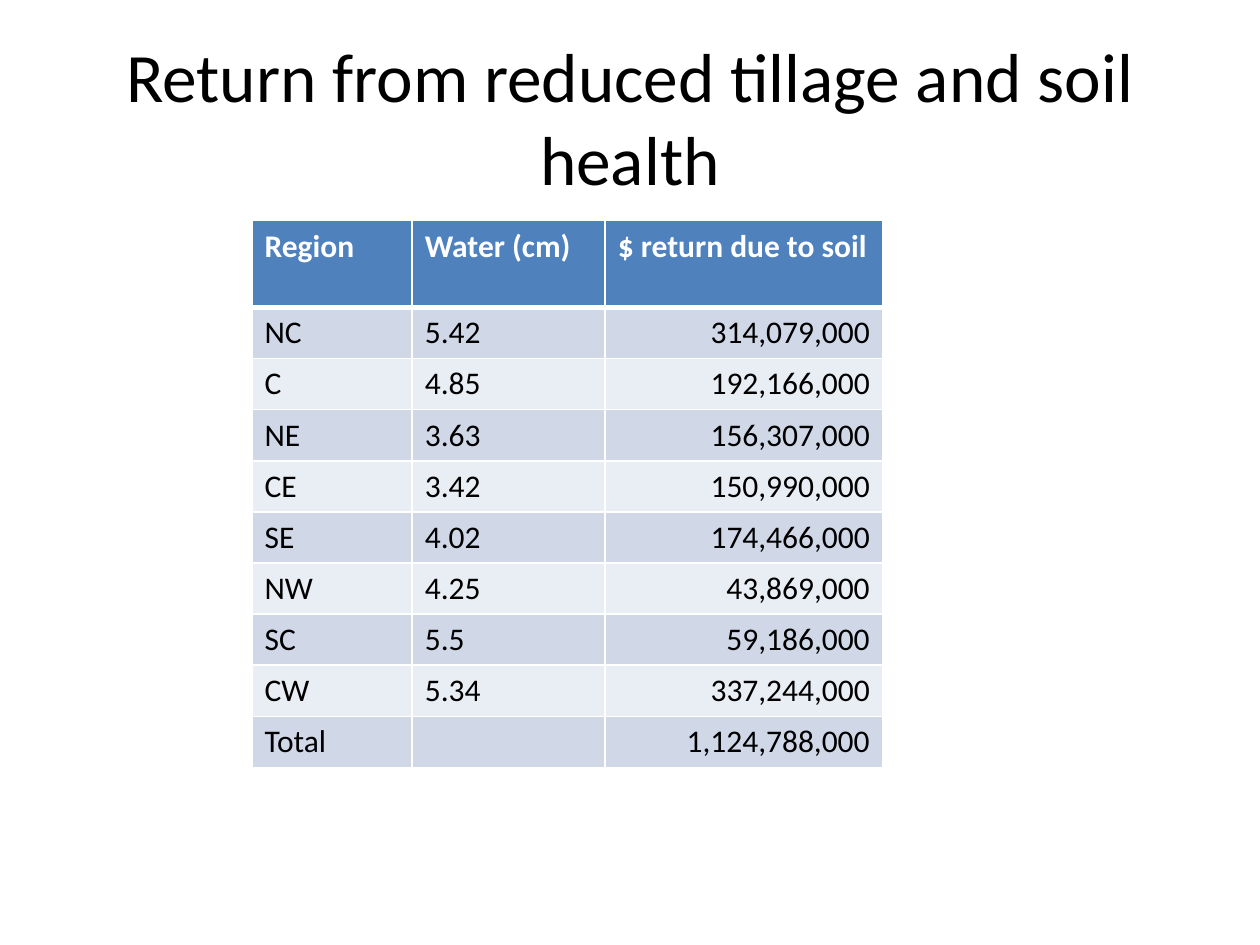
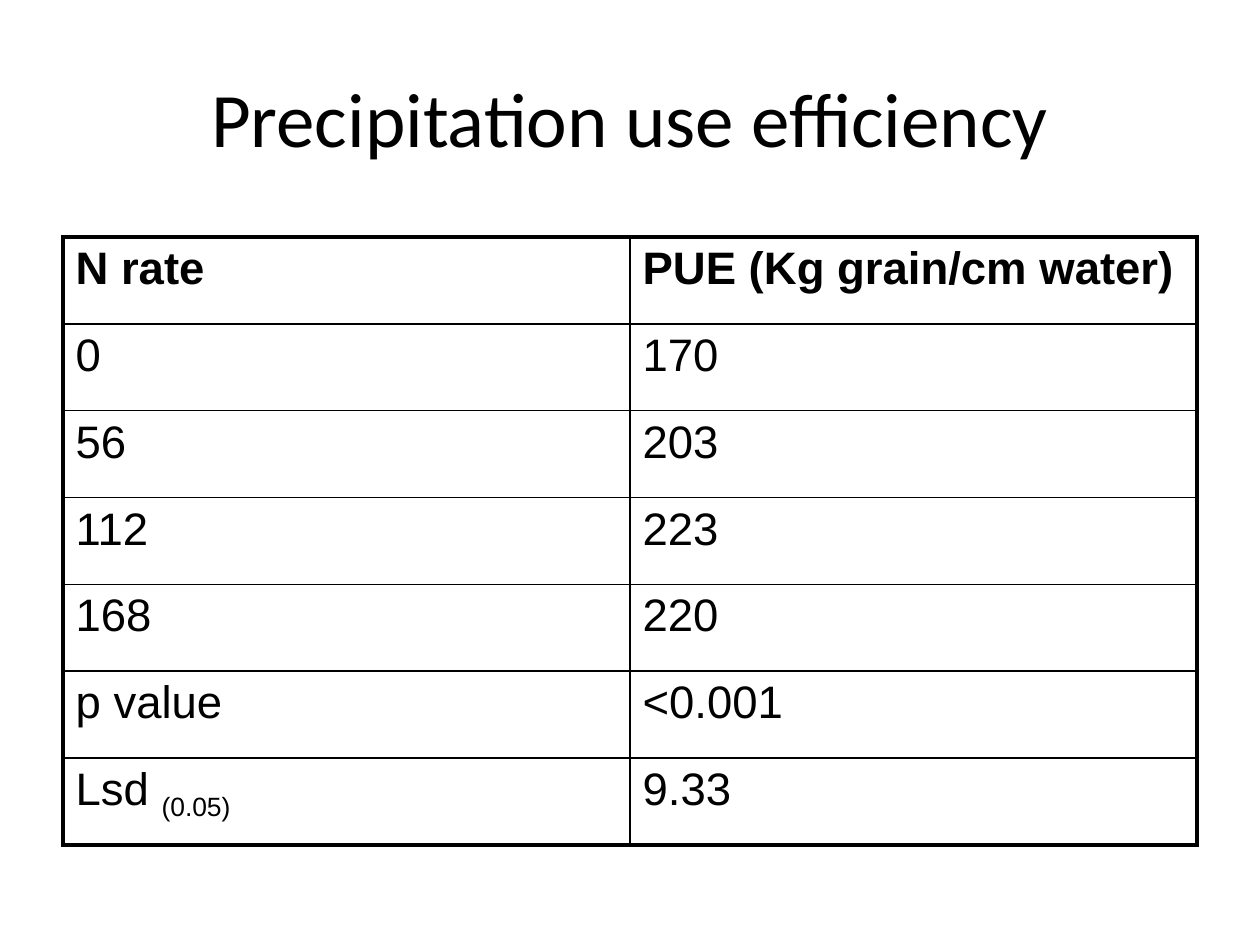
import pptx
import pptx.util
import pptx.dml.color
import pptx.enum.text
import pptx.oxml.ns
from lxml import etree

Cm = pptx.util.Cm
Pt = pptx.util.Pt
Align = pptx.enum.text.PP_ALIGN
Anchor = pptx.enum.text.MSO_ANCHOR
qn = pptx.oxml.ns.qn

HUES = {
    "ink": "000000",
    "paper": "FFFFFF",
    "head": "4F81BD",
    "odd": "D0D8E8",
    "even": "E9EDF4",
}

RETURNS = [
    ("Region", "Water (cm)", "$ return due to soil"),
    ("NC", "5.42", "314,079,000"),
    ("C", "4.85", "192,166,000"),
    ("NE", "3.63", "156,307,000"),
    ("CE", "3.42", "150,990,000"),
    ("SE", "4.02", "174,466,000"),
    ("NW", "4.25", "43,869,000"),
    ("SC", "5.5", "59,186,000"),
    ("CW", "5.34", "337,244,000"),
    ("Total", "", "1,124,788,000"),
]

RATES = [
    ("N rate", "PUE (Kg grain/cm water)"),
    ("0", "170"),
    ("56", "203"),
    ("112", "223"),
    ("168", "220"),
    ("p value", "<0.001"),
    (("Lsd ", "(0.05)"), "9.33"),
]


def write(frame, text, size=18, font="Calibri", hue="ink", bold=False,
          align=Align.LEFT):
    """Fill a text frame; in a (text, low) pair the second part is subscript."""
    para = frame.paragraphs[0]
    para.alignment = align
    parts = (text,) if isinstance(text, str) else text
    for spot, part in enumerate(parts):
        run = para.add_run()
        run.text = part
        run.font.size = Pt(size)
        run.font.name = font
        run.font.bold = bold
        run.font.color.rgb = pptx.dml.color.RGBColor.from_string(HUES[hue])
        if spot:
            run.font._element.set("baseline", "-25000")


def edge(cell, side, hue, width):
    """Draw one border; call in the order L, R, T, B and before the fill."""
    line = etree.SubElement(cell._tc.get_or_add_tcPr(), qn("a:ln" + side),
                            w=str(Pt(width)))
    fill = etree.SubElement(line, qn("a:solidFill"))
    etree.SubElement(fill, qn("a:srgbClr"), val=HUES[hue])


class Deck:
    def __init__(self):
        self.show = pptx.Presentation()
        self.show.slide_width = Cm(25.4)
        self.show.slide_height = Cm(19.05)
        self.slide = None

    def start(self, title, size=44):
        """Add a slide with its title."""
        self.slide = self.show.slides.add_slide(self.show.slide_layouts[5])
        box = self.slide.shapes.title
        box.left, box.top = Cm(1.27), Cm(0.76)
        box.width, box.height = Cm(22.86), Cm(3.18)
        frame = box.text_frame
        frame.word_wrap = True
        frame.auto_size = pptx.enum.text.MSO_AUTO_SIZE.NONE
        frame.vertical_anchor = Anchor.MIDDLE
        write(frame, title, size=size, align=Align.CENTER)

    def table(self, left, top, widths, heights, data, style):
        """Add a table; style(cell, row, col) sets borders and fill and
        returns the text format."""
        grid = self.slide.shapes.add_table(
            len(heights), len(widths), Cm(left), Cm(top),
            Cm(sum(widths)), Cm(sum(heights))).table
        grid.first_row = grid.horz_banding = False
        for col, width in zip(grid.columns, widths):
            col.width = Cm(width)
        for row, height in zip(grid.rows, heights):
            row.height = Cm(height)
        for r, line in enumerate(data):
            for c, text in enumerate(line):
                cell = grid.cell(r, c)
                form = style(cell, r, c)
                write(cell.text_frame, text, **form)


def band(cell, row, col):
    """Blue header over banded rows, split by white lines."""
    for side in "LRTB":
        thick = (side == "B" and row == 0) or (side == "T" and row == 1)
        edge(cell, side, "paper", 3 if thick else 1)
    tone = "head" if row == 0 else "odd" if row % 2 else "even"
    cell.fill.solid()
    cell.fill.fore_color.rgb = pptx.dml.color.RGBColor.from_string(HUES[tone])
    if row == 0:
        return {"hue": "paper", "bold": True}
    return {"align": Align.RIGHT if col == 2 else Align.LEFT}


def frame(cell, row, col):
    """Plain cells with thin black lines and a thick outer frame."""
    outer = {"L": col == 0, "R": col == len(RATES[0]) - 1,
             "T": row == 0, "B": row == len(RATES) - 1}
    for side, thick in outer.items():
        edge(cell, side, "ink", 2.25 if thick else 1)
    cell.fill.background()
    return {"size": 26, "font": "Arial", "bold": row == 0}


def main():
    deck = Deck()
    deck.start("Return from reduced tillage and soil health", size=39.6)
    deck.table(5.08, 4.45, [3.23, 3.89, 5.59], [1.75] + [1.02] * 9,
               RETURNS, band)
    deck.start("Precipitation use efficiency")
    deck.table(1.27, 4.78, [11.43] * 2, [1.75] * len(RATES), RATES, frame)
    deck.show.save("out.pptx")


if __name__ == "__main__":
    main()
